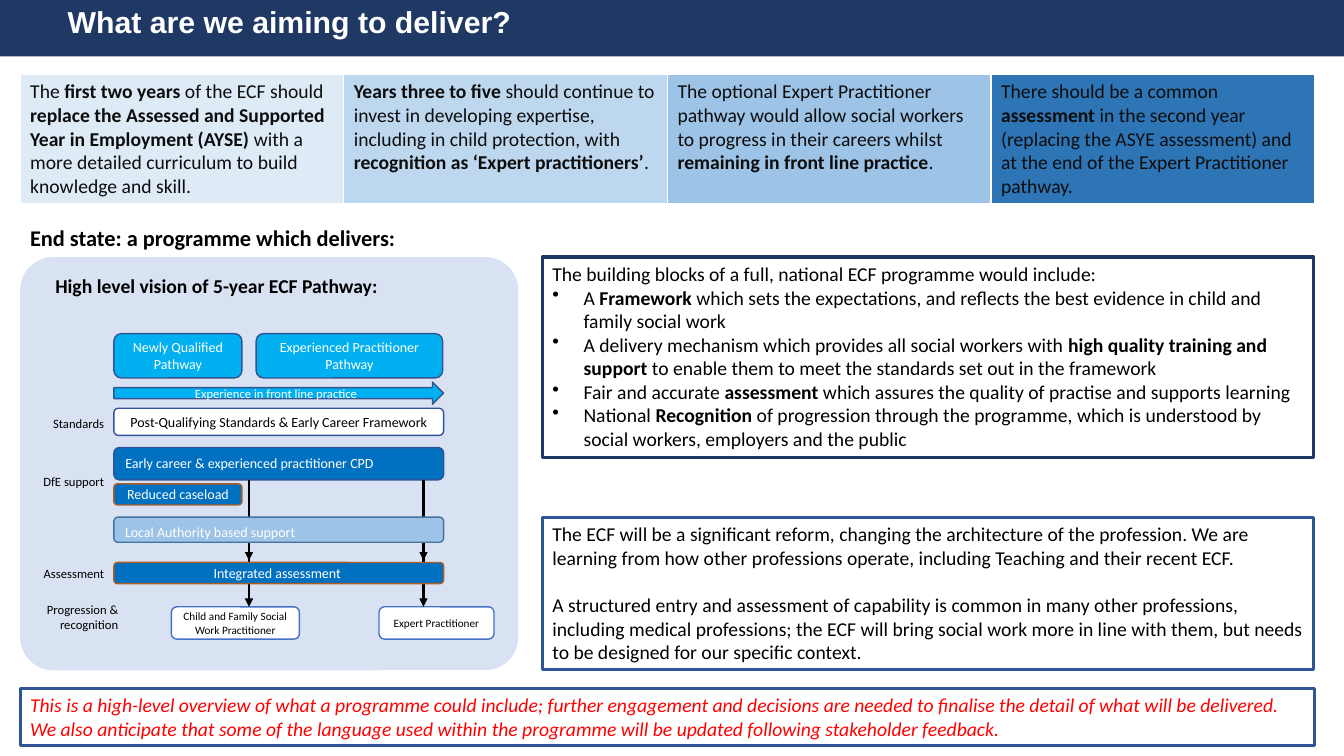
from dataclasses import dataclass
from typing import Optional

from lxml import etree
from pptx import Presentation
from pptx import util as u
from pptx.dml.color import RGBColor
from pptx.enum import shapes, text
from pptx.oxml.ns import qn

RECT = shapes.MSO_SHAPE.RECTANGLE
ROUND = shapes.MSO_SHAPE.ROUNDED_RECTANGLE
ARROW = shapes.MSO_SHAPE.RIGHT_ARROW
LEFT, CENTER, RIGHT = text.PP_ALIGN.LEFT, text.PP_ALIGN.CENTER, text.PP_ALIGN.RIGHT
TOP, MIDDLE = text.MSO_ANCHOR.TOP, text.MSO_ANCHOR.MIDDLE

NAVY, BLUE, SKY, MID = "203864", "2F5597", "00B0F0", "0070C0"
BROWN, BLACK, WHITE, RED = "AF5C24", "000000", "FFFFFF", "FF0000"
PATH_X, PATH_W = 1.13, 3.27


@dataclass
class Style:
    size: float = 14
    color: str = BLACK
    align: text.PP_ALIGN = LEFT
    bold: bool = False
    italic: bool = False
    font: str = "Calibri"
    spacing: Optional[float] = None


@dataclass
class Block:
    left: float
    top: float
    width: float
    height: float
    words: str
    fill: str
    line: str
    size: float = 10
    color: str = WHITE
    align: text.PP_ALIGN = CENTER
    anchor: text.MSO_ANCHOR = MIDDLE
    kind: shapes.MSO_SHAPE = ROUND


@dataclass
class Label:
    left: float
    top: float
    width: float
    height: float
    words: str
    style: Style


@dataclass
class Panel:
    left: float
    top: float
    width: float
    height: float
    line: str
    paragraphs: list[str]
    style: Style


BLOCKS = [
    Block(PATH_X, 3.31, 1.27, 0.44, "Newly Qualified Pathway", SKY, "325491"),
    Block(2.54, 3.31, 1.85, 0.44, "Experienced Practitioner Pathway", SKY, "325491"),
    Block(PATH_X, 3.79, PATH_W, 0.22, "Experience in front line practice", SKY, "325491", 9, kind=ARROW),
    Block(PATH_X, 4.05, PATH_W, 0.27, "Post-Qualifying Standards & Early Career Framework",
          WHITE, BLUE, color=BLACK),
    Block(PATH_X, 4.44, PATH_W, 0.32, "Early career & experienced practitioner CPD",
          MID, BLUE, align=LEFT, anchor=TOP),
    Block(1.7, 6.02, 1.27, 0.32, "Child and Family Social Work Practitioner", WHITE, "4472C4", 8, BLACK),
    Block(PATH_X, 4.8, 1.27, 0.21, "Reduced caseload", MID, BROWN),
    Block(3.76, 6.02, 1.14, 0.32, "Expert Practitioner", WHITE, "4472C4", 8, BLACK),
]
BLOCKS_OVER_ARROWS = [
    Block(PATH_X, 5.13, PATH_W, 0.25, "Local Authority based support",
          "9DC3E6", "43739E", align=LEFT, anchor=TOP),
    Block(PATH_X, 5.58, PATH_W, 0.21, "Integrated assessment ", MID, BROWN),
]
SIDE = Style(9, align=RIGHT)
LABELS = [
    Label(0.18, 4.08, 0.95, 0.25, "Standards", SIDE),
    Label(0.13, 5.92, 1.14, 0.4, "Progression & recognition", SIDE),
    Label(0.18, 4.65, 0.95, 0.25, "DfE support", SIDE),
    Label(0.18, 5.56, 0.95, 0.25, "Assessment", SIDE),
    Label(0.45, 2.67, 4.19, 0.34, "High level vision of 5-year ECF Pathway:", Style(bold=True)),
    Label(0.2, 2.2, 4.76, 0.39, "End state: a programme which delivers:", Style(16, bold=True, spacing=0.9)),
]
# Double asterisks enclose bold words
PHASES = [
    ("DEEBF7", "The **first two years **of the ECF should **replace the Assessed and Supported Year in "
               "Employment (AYSE) **with a more detailed curriculum to build knowledge and skill."),
    ("BDD7EE", "**Years three to five **should continue to invest in developing expertise, including in "
               "child protection, with **recognition as ‘Expert practitioners’**."),
    ("9DC3E6", "The optional Expert Practitioner pathway would allow social workers to progress in their "
               "careers whilst **remaining in front line practice**."),
    ("2E75B6", "There should be a common **assessment **in the second year (replacing the ASYE assessment) "
               "and at the end of the Expert Practitioner pathway."),
]
BUILDING = Panel(5.38, 2.55, 7.65, 1.99, NAVY, [
    "The building blocks of a full, national ECF programme would include:",
    "A **Framework** which sets the expectations, and reflects the best evidence in child and family social work",
    "A delivery mechanism which provides all social workers with **high quality training and support** "
    "to enable them to meet the standards set out in the framework",
    "Fair and accurate **assessment** which assures the quality of practise and supports learning",
    "National **Recognition **of progression through the programme, which is understood by social workers, "
    "employers and the public"], Style())
REFORM = Panel(5.38, 5.13, 7.65, 1.51, BLUE, [
    "The ECF will be a significant reform, changing the architecture of the profession. We are learning "
    "from how other professions operate, including Teaching and their recent ECF.",
    "A structured entry and assessment of capability is common in many other professions, including medical "
    "professions; the ECF will bring social work more in line with them, but needs to be designed for our "
    "specific context."], Style())
CAVEAT = Panel(0.2, 6.83, 12.84, 0.57, BLUE, [
    "This is a high-level overview of what a programme could include; further engagement and decisions are "
    "needed to finalise the detail of what will be delivered. We also anticipate that some of the language "
    "used within the programme will be updated following stakeholder feedback."], Style(color=RED, italic=True))


def rgb(value: str) -> RGBColor:
    return RGBColor.from_string(value)


def box(*lengths: float) -> list[u.Length]:
    return [u.Inches(n) for n in lengths]


def write(tf, paragraphs: list[str], style: Style, anchor=TOP) -> None:
    tf.word_wrap = True
    tf.vertical_anchor = anchor
    for i, words in enumerate(paragraphs):
        p = tf.add_paragraph() if i else tf.paragraphs[0]
        p.alignment = style.align
        p.line_spacing = style.spacing
        p.font.name, p.font.size = style.font, u.Pt(style.size)
        p.font.color.rgb = rgb(style.color)
        p.font.bold, p.font.italic = style.bold, style.italic
        for j, part in enumerate(words.split("**")):
            if part:
                r = p.add_run()
                r.text = part
                if j % 2:
                    r.font.bold = True


def add_shape(s, kind, at: list[u.Length], fill: Optional[str], line: Optional[str] = None, weight: float = 1):
    sp = s.shapes.add_shape(kind, *at)
    sp.shadow.inherit = False
    if fill:
        sp.fill.solid()
        sp.fill.fore_color.rgb = rgb(fill)
    else:
        sp.fill.background()
    if line:
        sp.line.color.rgb = rgb(line)
        sp.line.width = u.Pt(weight)
    else:
        sp.line.fill.background()
    return sp


def add_block(s, b: Block) -> None:
    sp = add_shape(s, b.kind, box(b.left, b.top, b.width, b.height), b.fill, b.line)
    write(sp.text_frame, [b.words], Style(b.size, b.color, b.align), b.anchor)


def add_label(s, label: Label) -> None:
    sp = s.shapes.add_textbox(*box(label.left, label.top, label.width, label.height))
    write(sp.text_frame, [label.words], label.style)


def add_panel(s, panel: Panel):
    sp = add_shape(s, RECT, box(panel.left, panel.top, panel.width, panel.height), None, panel.line, 2.25)
    write(sp.text_frame, panel.paragraphs, panel.style)
    return sp.text_frame


def add_bullet(p) -> None:
    pPr = p._p.get_or_add_pPr()
    pPr.set("marL", str(u.Inches(0.31)))
    pPr.set("indent", str(-u.Inches(0.31)))
    bullet = etree.Element(qn("a:buChar"), char="•")
    pPr.find(qn("a:defRPr")).addprevious(bullet)


def add_arrow(s, x: float, top: float, bottom: float) -> None:
    c = s.shapes.add_connector(shapes.MSO_CONNECTOR.STRAIGHT, *box(x, top, x, bottom))
    c.line.color.rgb = rgb(BLACK)
    c.line.width = u.Pt(1.5)
    etree.SubElement(c.line._get_or_add_ln(), qn("a:tailEnd"), type="triangle")
    etree.SubElement(c._element.spPr, qn("a:effectLst"))


def add_phases(s) -> None:
    table = s.shapes.add_table(1, len(PHASES), *box(0.2, 0.74, 12.84, 1.27)).table
    table.first_row = table.horz_banding = False
    for cell, (fill, words) in zip(table.rows[0].cells, PHASES):
        cell.fill.solid()
        cell.fill.fore_color.rgb = rgb(fill)
        write(cell.text_frame, [words], Style(color="0D0D0D"))


def add_title(s) -> None:
    add_shape(s, RECT, box(0, -0.06, 13.33, 0.62), NAVY)
    sp = s.shapes.title
    sp.left, sp.top, sp.width, sp.height = box(0.57, 0.05, 11.5, 0.38)
    sp.fill.solid()
    sp.fill.fore_color.rgb = rgb(NAVY)
    sp.text_frame.auto_size = text.MSO_AUTO_SIZE.NONE
    write(sp.text_frame, ["What are we aiming to deliver?"],
          Style(21.6, WHITE, bold=True, font="Arial", spacing=0.9), MIDDLE)
    s.shapes.element.append(sp.element)  # in front of the band


def main() -> None:
    prs = Presentation()
    prs.slide_width, prs.slide_height = box(13.33, 7.5)
    s = prs.slides.add_slide(prs.slide_layouts[5])
    backdrop = add_shape(s, ROUND, box(0.2, 2.55, 4.94, 4.1), "B4C7E7")
    backdrop.adjustments[0] = 0.08
    tint = backdrop.element.spPr.find(qn("a:solidFill"))[0]
    etree.SubElement(tint, qn("a:alpha"), val="50000")
    add_title(s)
    add_phases(s)
    for b in BLOCKS:
        add_block(s, b)
    for top in (4.76, 5.22):
        for x in (2.47, 4.2):
            add_arrow(s, x, top, top + 0.8)
    for b in BLOCKS_OVER_ARROWS:
        add_block(s, b)
    for label in LABELS:
        add_label(s, label)
    for p in add_panel(s, BUILDING).paragraphs[1:]:
        add_bullet(p)
    add_panel(s, REFORM).paragraphs[1].space_before = u.Pt(17)
    add_panel(s, CAVEAT)
    prs.save("out.pptx")


if __name__ == "__main__":
    main()
